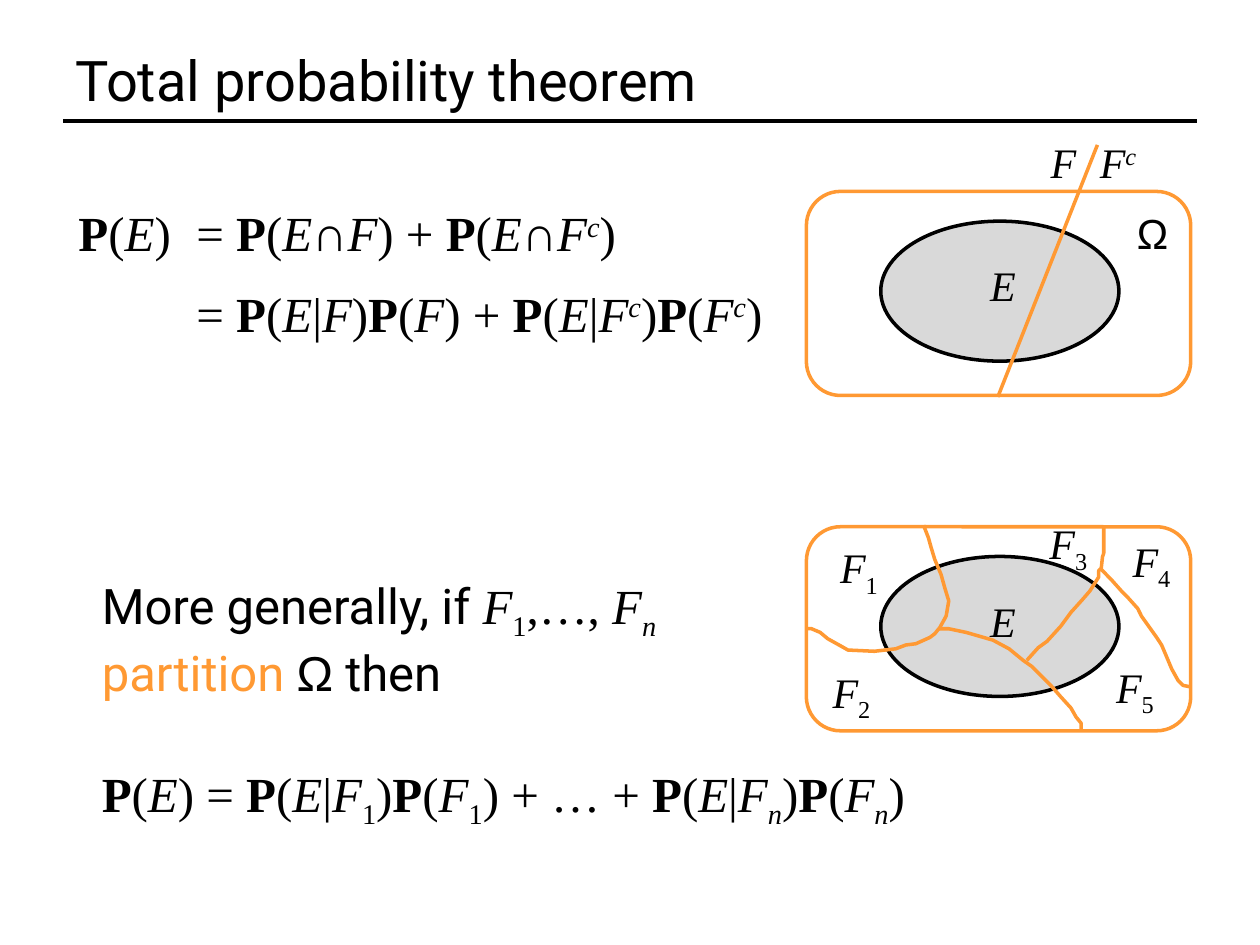
import itertools

import lxml.etree
import pptx
import pptx.dml.color
import pptx.enum.shapes
import pptx.enum.text
import pptx.oxml.ns
import pptx.util

Pt = pptx.util.Pt
KIND = pptx.enum.shapes.MSO_SHAPE
ALIGN = pptx.enum.text.PP_ALIGN
ANCHOR = pptx.enum.text.MSO_ANCHOR
HUES = {"ink": "000000", "accent": "FF9933", "fill": "D9D9D9"}
RAISE = {"^": 30000, "_": -25000}


def color(name):
    return pptx.dml.color.RGBColor.from_string(HUES[name])


def glyphs(text):
    """Yield each character with its (bold, italic, baseline) look."""
    shift = 0
    for char in text:
        if char in RAISE:
            shift = RAISE[char]
            continue
        bold = char == "P"
        yield char, (bold, not bold and (char.isalpha() or char == "∩"), shift)
        shift = 0


class Deck:
    serif, sans, plain = "Times New Roman", "Roboto", "Arial"
    stroke = 2

    def __init__(self):
        self.show = pptx.Presentation()
        self.show.slide_width, self.show.slide_height = Pt(720), Pt(540)
        self.slide = self.show.slides.add_slide(self.show.slide_layouts[6])
        self.shapes = self.slide.shapes

    def box(self, left, top, width, height, wrap=False):
        frame = self.shapes.add_textbox(Pt(left), Pt(top), Pt(width), Pt(height)).text_frame
        frame.word_wrap = wrap
        frame.auto_size = pptx.enum.text.MSO_AUTO_SIZE.SHAPE_TO_FIT_TEXT
        return frame

    def words(self, para, text, size, font, hue="ink"):
        run = para.add_run()
        run.text = text
        run.font.size, run.font.name = Pt(size), font
        run.font.color.rgb = color(hue)
        return run

    def math(self, para, text, size):
        """Set a formula: P is bold, other letters italic, ^ and _ shift one character."""
        for (bold, slant, shift), group in itertools.groupby(glyphs(text), lambda g: g[1]):
            run = self.words(para, "".join(char for char, look in group), size, self.serif)
            run.font.bold, run.font.italic = bold, slant
            if shift:
                run._r.get_or_add_rPr().set("baseline", str(shift))

    def label(self, text, left, top, width, height=36, size=24, align=ALIGN.LEFT, wrap=False):
        para = self.box(left, top, width, height, wrap).paragraphs[0]
        para.alignment = align
        self.math(para, text, size)

    def shape(self, kind, left, top, width, height, hue, fill=None):
        shape = self.shapes.add_shape(kind, Pt(left), Pt(top), Pt(width), Pt(height))
        self.paint(shape, hue, fill)
        return shape

    def paint(self, shape, hue, fill=None):
        shape.shadow.inherit = False
        shape.line.color.rgb, shape.line.width = color(hue), Pt(self.stroke)
        if fill:
            shape.fill.solid()
            shape.fill.fore_color.rgb = color(fill)
        else:
            shape.fill.background()

    def line(self, start, end, hue):
        line = self.shapes.add_connector(
            pptx.enum.shapes.MSO_CONNECTOR.STRAIGHT, *map(Pt, start + end))
        line.line.color.rgb, line.line.width = color(hue), Pt(self.stroke)
        lxml.etree.SubElement(line._element.spPr, pptx.oxml.ns.qn("a:effectLst"))

    def curve(self, points):
        first, *rest = [(Pt(x), Pt(y)) for x, y in points]
        pen = self.shapes.build_freeform(*first)
        pen.add_line_segments(rest, close=False)
        self.paint(pen.convert_to_shape(), "accent")

    def venn(self, top):
        """Draw the sample space with event E and return its frame."""
        space = self.shape(KIND.ROUNDED_RECTANGLE, 460.8, top, 219.6, 116.6, "accent")
        self.shape(KIND.OVAL, 503.3, top + 17, 136.1, 80, "ink", "fill")
        self.label("E", 558.7, top + 35.5, 31.7, wrap=True)
        return space


BORDERS = [
    [(527.8, 300.2), (530.6, 307.4), (532, 312.5), (534.2, 319.7), (537.8, 328.3),
     (540, 336.2), (542.2, 343.4), (540.7, 352.1), (537.1, 358.6), (534.2, 362.2),
     (531.4, 364.3), (523.4, 367.9), (517.7, 368.6), (511.9, 370.8), (499.7, 372.2),
     (484.6, 371.5), (479.5, 368.6), (473, 365), (468.7, 361.4), (463.7, 359.3),
     (460.1, 359.3)],
    [(536.4, 359.3), (542.2, 359.3), (552.2, 361.4), (567.4, 365.8), (576.7, 370.8),
     (584.6, 377.3), (589.7, 380.9), (595.4, 386.6), (600.5, 391.7), (606.2, 398.2),
     (612, 404.6), (614.9, 409.7), (617.8, 413.3), (617.8, 418.3)],
    [(586.8, 377.3), (593.3, 370.1), (598.3, 366.5), (606.2, 357.8), (612, 349.9),
     (618.5, 342.7), (622.8, 337.7), (627.8, 329.8), (627.8, 326.2), (629.3, 324.7),
     (630, 318.2), (630.7, 316.1), (630.7, 301.7)],
    [(629.3, 325.4), (635, 331.2), (640.8, 337.7), (644.4, 341.3), (650.2, 347.8),
     (652.3, 352.1), (661, 364.3), (663.8, 368.6), (666, 373.7), (669.6, 382.3),
     (673.2, 388.8), (676.1, 391.7), (679.7, 392.4)],
]
PARTS = [(473, 306), (468.7, 377.3), (592.6, 292.3), (640.1, 302.4), (630.7, 374.4)]


def main():
    deck = Deck()
    deck.line((36, 69.1), (684, 69.1), "ink")
    title = deck.box(36, 21.6, 648, 47.5, wrap=True)
    title.auto_size = pptx.enum.text.MSO_AUTO_SIZE.NONE
    title.vertical_anchor = ANCHOR.MIDDLE
    deck.words(title.paragraphs[0], "Total probability theorem", 32, deck.sans)

    deck.label("P(E)", 37.4, 112.3, 67.7, 41, 28, ALIGN.CENTER)
    deck.label("= P(E∩F) + P(E∩F^c)", 105.1, 112.3, 265, 41, 28)
    deck.label("= P(E|F)P(F) + P(E|F^c)P(F^c)", 105.1, 158.4, 349.2, 41, 28)

    frame = deck.venn(109.4).text_frame
    frame.vertical_anchor = ANCHOR.TOP
    frame.paragraphs[0].alignment = ALIGN.RIGHT
    deck.words(frame.paragraphs[0], "Ω", 24, deck.plain)
    deck.line((627.1, 82.8), (570.2, 226.8), "accent")
    deck.label("F", 593.3, 74.2, 27.4)
    deck.label("F^c", 621.4, 74.2, 36)

    deck.venn(301)
    for border in BORDERS:
        deck.curve(border)
    for num, (left, top) in enumerate(PARTS, 1):
        deck.label(f"F_{num}", left, top, 38.2)

    deck.label("P(E) = P(E|F_1)P(F_1) + … + P(E|F_n)P(F_n)", 51.1, 432.7, 496, 41, 28)
    claim = deck.box(51.1, 325.4, 334.8, 74.9)
    para = claim.paragraphs[0]
    deck.words(para, "More generally, if ", 28, deck.sans)
    deck.math(para, "F_1,…, F_n", 28)
    para = claim.add_paragraph()
    deck.words(para, "partition ", 28, deck.sans, "accent")
    deck.words(para, "Ω", 28, deck.plain)
    deck.words(para, " then", 28, deck.sans)

    deck.show.save("out.pptx")


if __name__ == "__main__":
    main()
